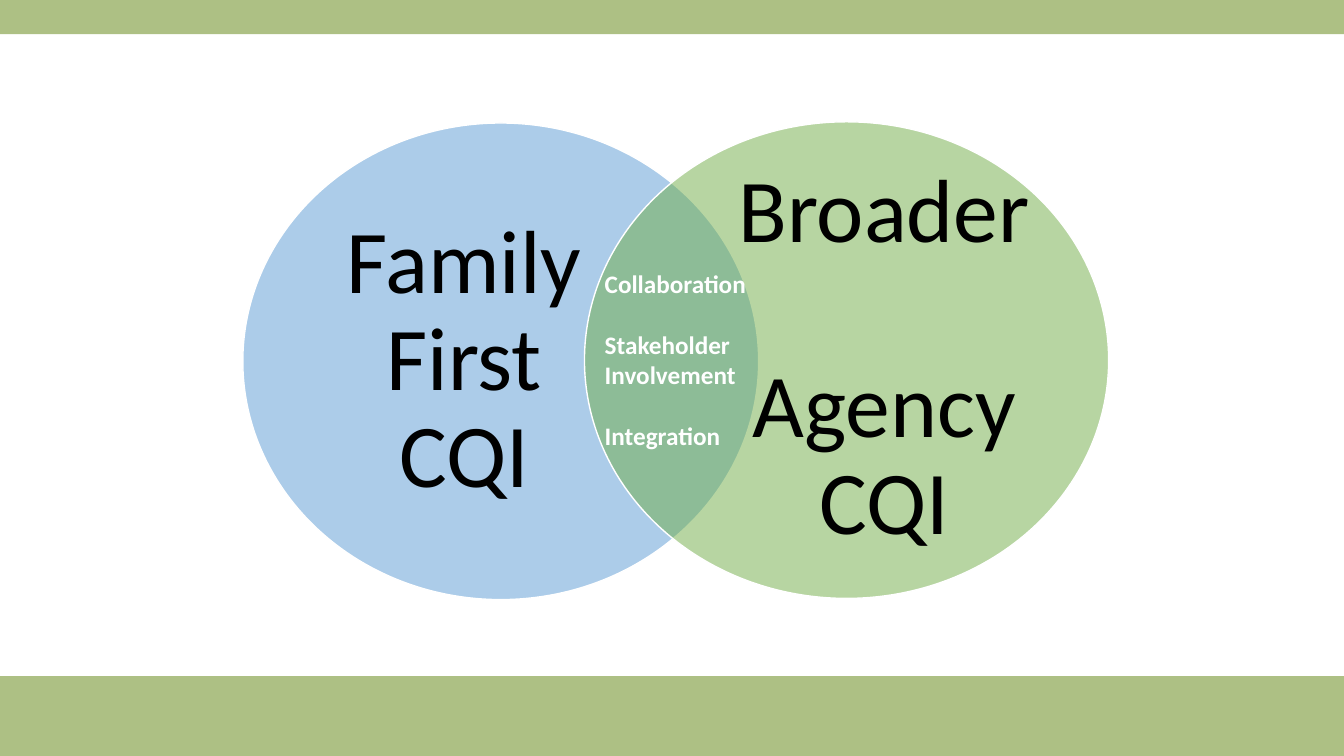
import pptx
import pptx.dml.color
import pptx.enum.shapes
import pptx.enum.text
import pptx.oxml.ns
import pptx.util
from lxml import etree

Cm = pptx.util.Cm
Pt = pptx.util.Pt
RGBColor = pptx.dml.color.RGBColor
Shape = pptx.enum.shapes.MSO_SHAPE
Align = pptx.enum.text.PP_ALIGN
Anchor = pptx.enum.text.MSO_ANCHOR

BAND_GREEN = RGBColor(0xAD, 0xC0, 0x84)
BLUE = RGBColor(0x5B, 0x9B, 0xD5)
GREEN = RGBColor(0x70, 0xAD, 0x47)
WHITE = RGBColor(0xFF, 0xFF, 0xFF)
BLACK = RGBColor(0, 0, 0)

SLIDE_WIDTH = 33.87
SLIDE_HEIGHT = 19.05

CIRCLE_FRAME = {"margin_left": 0, "margin_top": 0, "margin_right": 0,
                "margin_bottom": 0, "vertical_anchor": Anchor.MIDDLE}
CIRCLE_PARA = {"alignment": Align.CENTER, "line_spacing": 0.9}
CIRCLE_FONT = {"name": "Calibri", "size": Pt(64)}
OVERLAP_FONT = {"name": "Calibri", "size": Pt(18), "bold": True}


def set_values(target, values):
    for name, value in values.items():
        setattr(target, name, value)


def add_filled(page, kind, place, color):
    shape = page.shapes.add_shape(kind, *map(Cm, place))
    shape.shadow.inherit = False
    shape.fill.solid()
    shape.fill.fore_color.rgb = color
    shape.line.fill.background()
    return shape


def add_circle(page, place, color):
    """Add a half-transparent ellipse with a thin white outline."""
    circle = add_filled(page, Shape.OVAL, place, color)
    set_values(circle.line, {"width": Pt(1)})
    circle.line.fill.solid()
    circle.line.color.rgb = WHITE
    tag = pptx.oxml.ns.qn
    fill_color = circle.fill._xPr.find(tag("a:solidFill")).find(tag("a:srgbClr"))
    etree.SubElement(fill_color, tag("a:alpha"), val="50000")


def add_text(page, place, texts, font, color, gap, frame_format, para_format):
    """Add a text box whose paragraphs are parted by the given gap."""
    box = page.shapes.add_textbox(*map(Cm, place))
    frame = box.text_frame
    frame.word_wrap = True
    set_values(frame, frame_format)
    for index, text in enumerate(texts):
        para = frame.paragraphs[0] if index == 0 else frame.add_paragraph()
        set_values(para, para_format)
        if index:
            para.space_before = gap
        span = para.add_run()
        span.text = text
        set_values(span.font, font)
        span.font.color.rgb = color


def main():
    deck = pptx.Presentation()
    deck.slide_width = Cm(SLIDE_WIDTH)
    deck.slide_height = Cm(SLIDE_HEIGHT)
    page = deck.slides.add_slide(deck.slide_layouts[6])

    # Bands along the bottom and top edges
    for top, height in ((17.04, 2.01), (0, 0.86)):
        add_filled(page, Shape.RECTANGLE, (0, top, SLIDE_WIDTH, height), BAND_GREEN)

    # Overlapping circles with their labels
    circles = (
        ((6.12, 3.1, 13, 12.01), BLUE, (7.95, 4.52, 7.49, 9.19),
         ["Family First CQI"]),
        ((14.73, 3.07, 13.21, 12.01), GREEN, (18.47, 4.47, 7.62, 9.19),
         ["Broader", "Agency CQI"]),
    )
    for circle_place, color, label_place, texts in circles:
        add_circle(page, circle_place, color)
        add_text(page, label_place, texts, CIRCLE_FONT, BLACK, Pt(70),
                 CIRCLE_FRAME, CIRCLE_PARA)

    # Shared topics in the overlap
    add_text(page, (14.99, 6.63, 4.11, 4.88),
             ["Collaboration", "Stakeholder Involvement", "Integration"],
             OVERLAP_FONT, WHITE, Pt(22), {}, {"alignment": Align.LEFT})

    deck.save("out.pptx")


if __name__ == "__main__":
    main()
